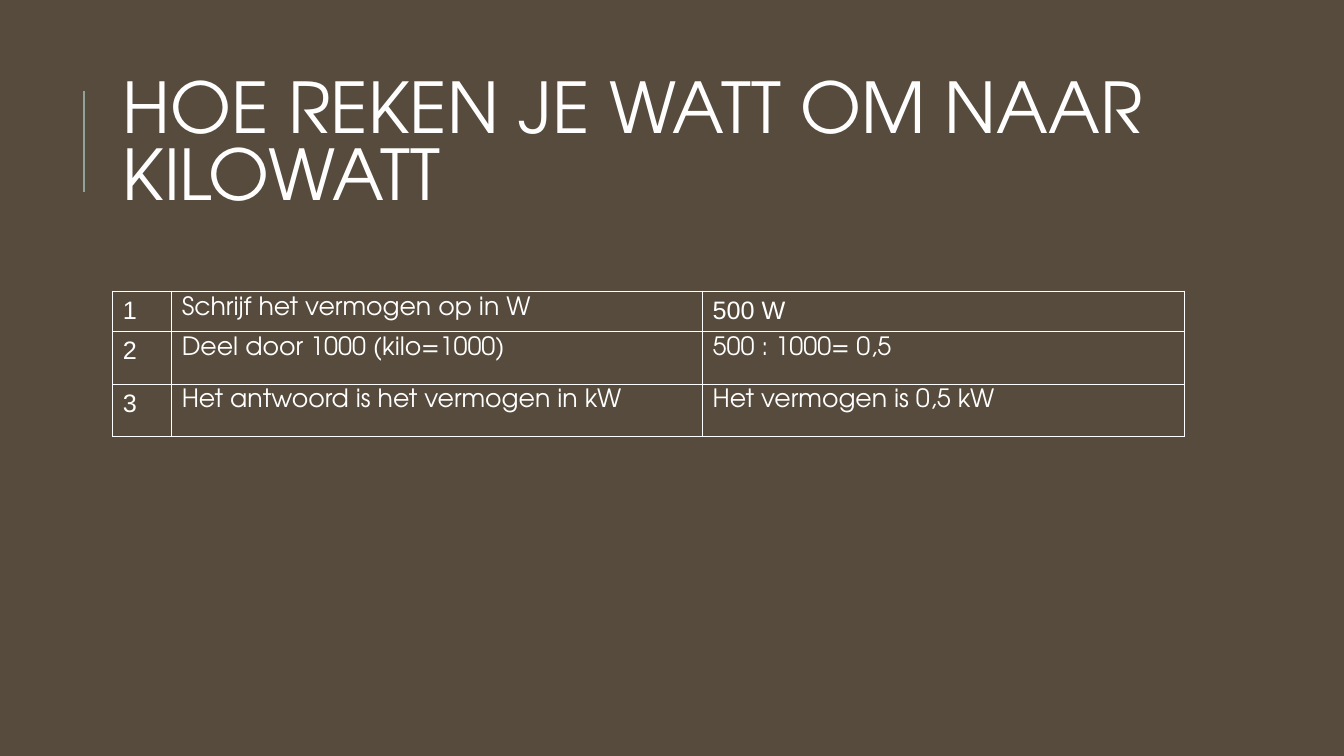
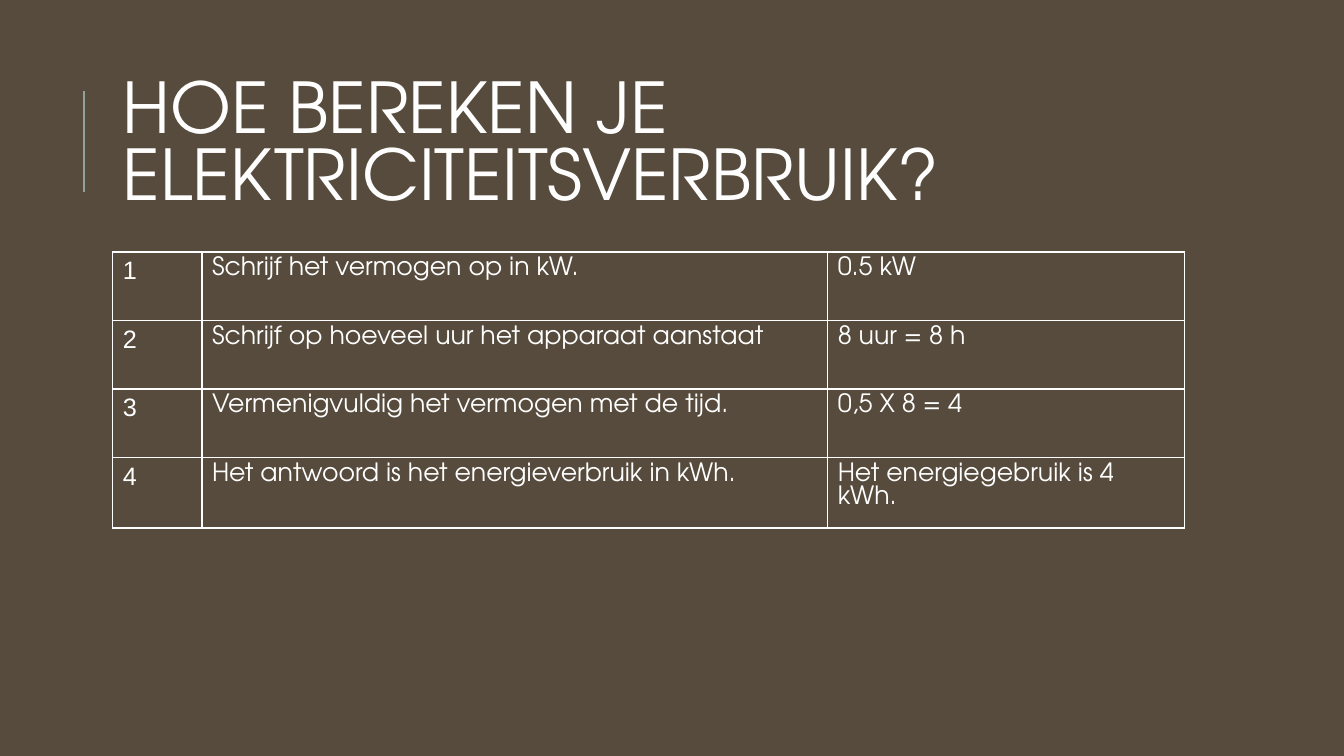
from dataclasses import dataclass

from lxml.etree import SubElement
from pptx import Presentation
from pptx.dml.color import RGBColor
from pptx.enum.shapes import MSO_CONNECTOR
from pptx.enum.text import MSO_ANCHOR
from pptx.oxml.ns import qn
from pptx.util import Emu, Inches, Pt


@dataclass(frozen=True)
class Theme:
    background: str = "564B3C"
    accent: str = "93A299"
    title_color: str = "FEFEFE"
    table_color: str = "FFFFFF"
    font: str = "TeX Gyre Adventor"
    plain_font: str = "Arial"
    title_size: int = 50
    table_size: int = 18
    title_spacing: float = 0.8
    accent_width: float = 1.5
    border_width: float = 1


class Deck:
    COLUMNS = 160
    ROWS = 90
    LEFT = 13.44
    WIDTH = 127.6

    def __init__(self, theme):
        self.theme = theme
        self.presentation = Presentation()
        self.presentation.slide_width = Inches(13.33)
        self.presentation.slide_height = Inches(7.5)
        self.slide = None

    def across(self, columns):
        return Emu(round(self.presentation.slide_width * columns / self.COLUMNS))

    def down(self, rows):
        return Emu(round(self.presentation.slide_height * rows / self.ROWS))

    def style(self, paragraph, font_name, size, color):
        paragraph.font.name = font_name
        paragraph.font.size = Pt(size)
        paragraph.font.color.rgb = RGBColor.from_string(color)

    def add_slide(self, title):
        self.slide = self.presentation.slides.add_slide(self.presentation.slide_layouts[6])
        fill = self.slide.background.fill
        fill.solid()
        fill.fore_color.rgb = RGBColor.from_string(self.theme.background)
        self.add_accent_line()
        self.add_title(title)

    def add_accent_line(self):
        x = self.across(10)
        connector = self.slide.shapes.add_connector(
            MSO_CONNECTOR.STRAIGHT, x, self.down(22.8), x, self.down(10.8))
        connector.line.color.rgb = RGBColor.from_string(self.theme.accent)
        connector.line.width = Pt(self.theme.accent_width)
        SubElement(connector._element.spPr, qn("a:effectLst"))

    def add_title(self, text):
        shape = self.slide.shapes.add_textbox(
            self.across(self.LEFT), self.down(7.68), self.across(self.WIDTH), self.down(19.68))
        frame = shape.text_frame
        frame.word_wrap = True
        frame.vertical_anchor = MSO_ANCHOR.MIDDLE
        frame.text = text
        paragraph = frame.paragraphs[0]
        paragraph.line_spacing = self.theme.title_spacing
        self.style(paragraph, self.theme.font, self.theme.title_size, self.theme.title_color)

    def add_steps(self, top, widths, heights, steps, plain_answers=()):
        table = self.slide.shapes.add_table(
            len(steps), len(widths), self.across(self.LEFT), self.down(top),
            self.across(sum(widths)), self.down(sum(heights))).table
        table.first_row = False
        table.horz_banding = False
        for column, width in zip(table.columns, widths):
            column.width = self.across(width)
        for row, height in zip(table.rows, heights):
            row.height = self.down(height)
        for number, (row, step) in enumerate(zip(table.rows, steps), start=1):
            for cell, text in zip(row.cells, (str(number), *step)):
                plain = text.isdigit() or text in plain_answers
                self.fill_cell(cell, text, self.theme.plain_font if plain else self.theme.font)

    def fill_cell(self, cell, text, font_name):
        cell.text = text
        self.style(cell.text_frame.paragraphs[0], font_name,
                   self.theme.table_size, self.theme.table_color)
        properties = cell._tc.get_or_add_tcPr()
        for side in "LRTB":
            border = SubElement(properties, qn(f"a:ln{side}"), w=str(Pt(self.theme.border_width)))
            solid = SubElement(border, qn("a:solidFill"))
            SubElement(solid, qn("a:srgbClr"), val=self.theme.table_color)
        cell.fill.background()


def main():
    deck = Deck(Theme())

    deck.add_slide("HOE REKEN JE WATT OM NAAR KILOWATT")
    deck.add_steps(
        top=34.68, widths=(7, 63.2, 57.4), heights=(4.6, 6.25, 6.25),
        steps=(
            ("Schrijf het vermogen op in W", "500 W"),
            ("Deel door 1000 (kilo=1000)", "500 : 1000= 0,5"),
            ("Het antwoord is het vermogen in kW", "Het vermogen is 0,5 kW"),
        ),
        plain_answers=("500 W",))

    deck.add_slide("HOE BEREKEN JE ELEKTRICITEITSVERBRUIK?")
    deck.add_steps(
        top=30, widths=(10.6, 74.5, 42.5), heights=(8.15,) * 4,
        steps=(
            ("Schrijf het vermogen op in kW.", "0.5 kW"),
            ("Schrijf op hoeveel uur het apparaat aanstaat", "8 uur = 8 h"),
            ("Vermenigvuldig het vermogen met de tijd.", "0,5 X 8 = 4"),
            ("Het antwoord is het energieverbruik in kWh.", "Het energiegebruik is 4 kWh."),
        ))

    deck.presentation.save("out.pptx")


if __name__ == "__main__":
    main()
